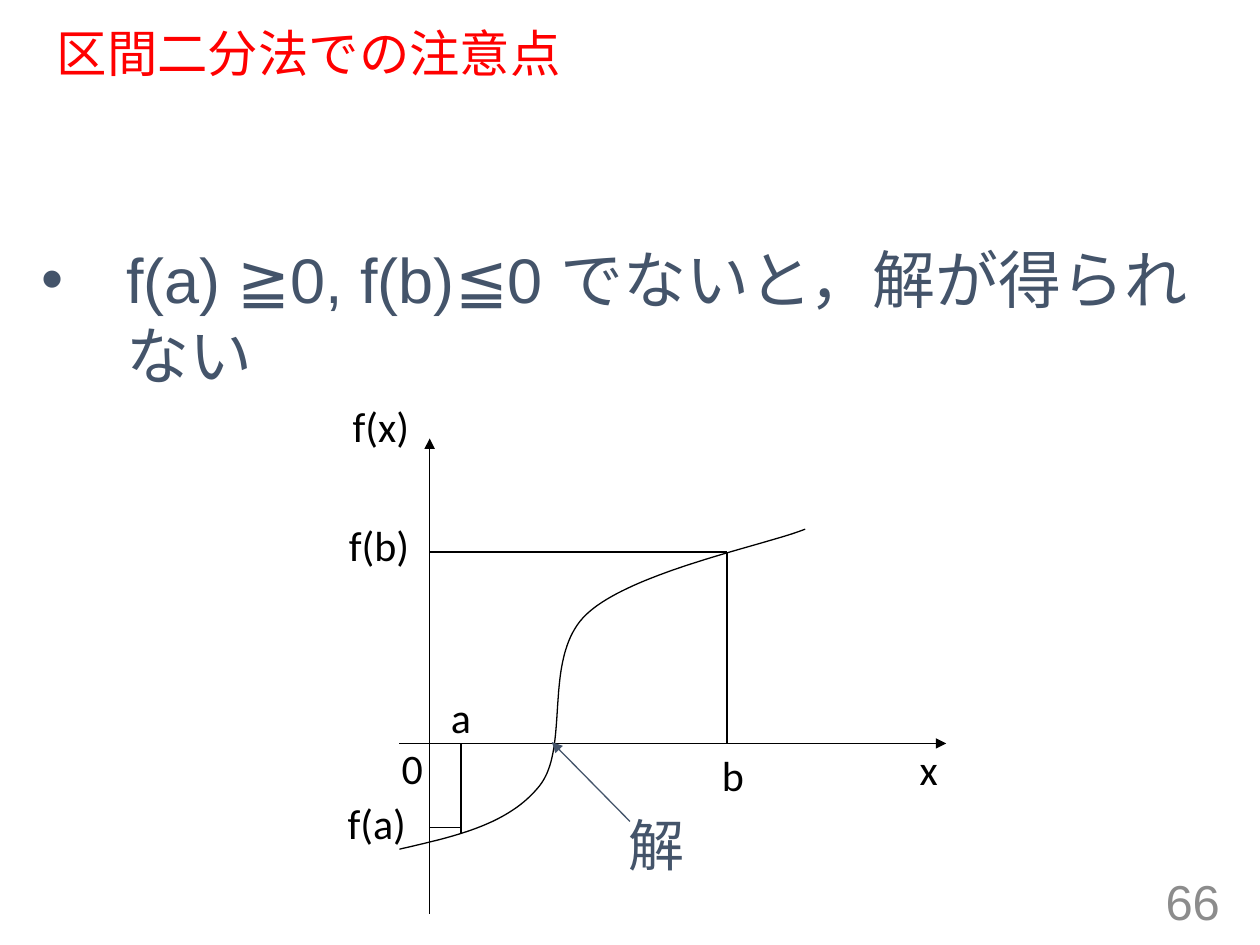
from pptx import Presentation
from pptx.dml.color import RGBColor
from pptx.enum import shapes, text
from pptx.oxml.ns import qn
from pptx.util import Inches, Pt
from lxml import etree

COLORS = {"title": "FF0000", "body": "44546A", "graph": "000000", "number": "8C8C8C"}


def format_text(shape, size, font, color, align=text.PP_ALIGN.LEFT):
    paragraph = shape.text_frame.paragraphs[0]
    paragraph.alignment = align
    paragraph.space_before = Pt(0)
    for run in paragraph.runs:
        run.font.size = Pt(size)
        run.font.name = font
        run.font.color.rgb = RGBColor.from_string(COLORS[color])


def add_line(start, end, color="graph", arrow=False):
    """Draw a thin straight line, with an arrowhead at its end if asked."""
    line = slide.shapes.add_connector(
        shapes.MSO_CONNECTOR.STRAIGHT, *map(Inches, (*start, *end)))
    line.line.width = Pt(0.75)
    line.line.color.rgb = RGBColor.from_string(COLORS[color])
    if arrow:
        etree.SubElement(line.line._get_or_add_ln(), qn("a:tailEnd"), type="triangle")
    etree.SubElement(line._element.spPr, qn("a:effectLst"))


presentation = Presentation()
presentation.slide_width = Inches(10)
presentation.slide_height = Inches(7.5)
slide = presentation.slides.add_slide(presentation.slide_layouts[1])

# Title and bullet
title = slide.shapes.title
body = slide.placeholders[1]
for shape, box, content in (
    (title, (0.35, 0.19, 9.25, 0.51), "区間二分法での注意点"),
    (body, (0.23, 1.86, 9.77, 4.5), "f(a) ≧0, f(b)≦0 でないと，解が得られない"),
):
    shape.left, shape.top, shape.width, shape.height = map(Inches, box)
    shape.text_frame.text = content
    shape.text_frame.auto_size = text.MSO_AUTO_SIZE.NONE
title.text_frame.vertical_anchor = text.MSO_ANCHOR.MIDDLE
title.text_frame.paragraphs[0].line_spacing = 0.9
format_text(title, 28.8, "Arial", "title")

properties = body.text_frame.paragraphs[0]._p.get_or_add_pPr()
properties.set("marL", str(Inches(0.67)))
properties.set("indent", str(-Inches(0.67)))
etree.SubElement(properties, qn("a:buFont"), typeface="Arial")
etree.SubElement(properties, qn("a:buChar"), char="•")
format_text(body, 36, "Arial", "body")

# Axes and the guide lines from a and b to the curve
origin_x, origin_y = 3.41, 5.9
add_line((3.17, origin_y), (7.51, origin_y), arrow=True)
add_line((origin_x, 7.25), (origin_x, 3.48), arrow=True)
for x, foot, level in ((3.66, 6.61, 6.57), (5.77, 4.38, 4.38)):
    add_line((x, origin_y), (x, foot))
    add_line((origin_x, level), (x, level))

# Curve f(x): Bezier segments sampled finely
segments = [
    ((3.17, 6.74), (3.6, 6.64), (4.03, 6.55), (4.28, 6.24)),
    ((4.28, 6.24), (4.53, 5.93), (4.3, 5.22), (4.65, 4.88)),
    ((4.65, 4.88), (5, 4.54), (6.1, 4.32), (6.39, 4.2)),
]
steps = 40
points = []
for segment in segments:
    for step in range(1, steps + 1):
        t = step / steps
        weights = ((1 - t) ** 3, 3 * t * (1 - t) ** 2, 3 * t ** 2 * (1 - t), t ** 3)
        points.append(tuple(
            Inches(sum(weight * point[axis] for weight, point in zip(weights, segment)))
            for axis in (0, 1)))
builder = slide.shapes.build_freeform(*map(Inches, segments[0][0]))
builder.add_line_segments(points, close=False)
curve = builder.convert_to_shape()
curve.shadow.inherit = False
curve.fill.background()
curve.line.width = Pt(0.75)
curve.line.color.rgb = RGBColor.from_string(COLORS["graph"])

# Graph labels
for label, left, top, width in (
    ("f(x)", 2.7, 3.13, 0.65),
    ("f(b)", 2.67, 4.07, 0.7),
    ("f(a)", 2.66, 6.28, 0.68),
    ("a", 3.48, 5.44, 0.36),
    ("b", 5.63, 5.9, 0.38),
    ("0", 3.09, 5.84, 0.37),
    ("x", 7.2, 5.85, 0.35),
):
    box = slide.shapes.add_textbox(Inches(left), Inches(top), Inches(width), Inches(0.51))
    box.text_frame.text = label
    box.text_frame.word_wrap = False
    box.text_frame.auto_size = text.MSO_AUTO_SIZE.SHAPE_TO_FIT_TEXT
    format_text(box, 24, "Calibri", "graph")

# Solution marker
solution = slide.shapes.add_textbox(Inches(4.89), Inches(6.38), Inches(1.1), Inches(0.63))
solution.text_frame.text = "解"
solution.text_frame.word_wrap = True
format_text(solution, 32, "Calibri", "body")
add_line((5, 6.52), (4.38, 5.89), color="body", arrow=True)

# Slide number
number = slide.shapes.add_textbox(Inches(7.53), Inches(6.95), Inches(2.25), Inches(0.4))
number.text_frame.text = "66"
number.text_frame.word_wrap = True
number.text_frame.vertical_anchor = text.MSO_ANCHOR.MIDDLE
format_text(number, 28, "Arial", "number", text.PP_ALIGN.RIGHT)

presentation.save("out.pptx")
